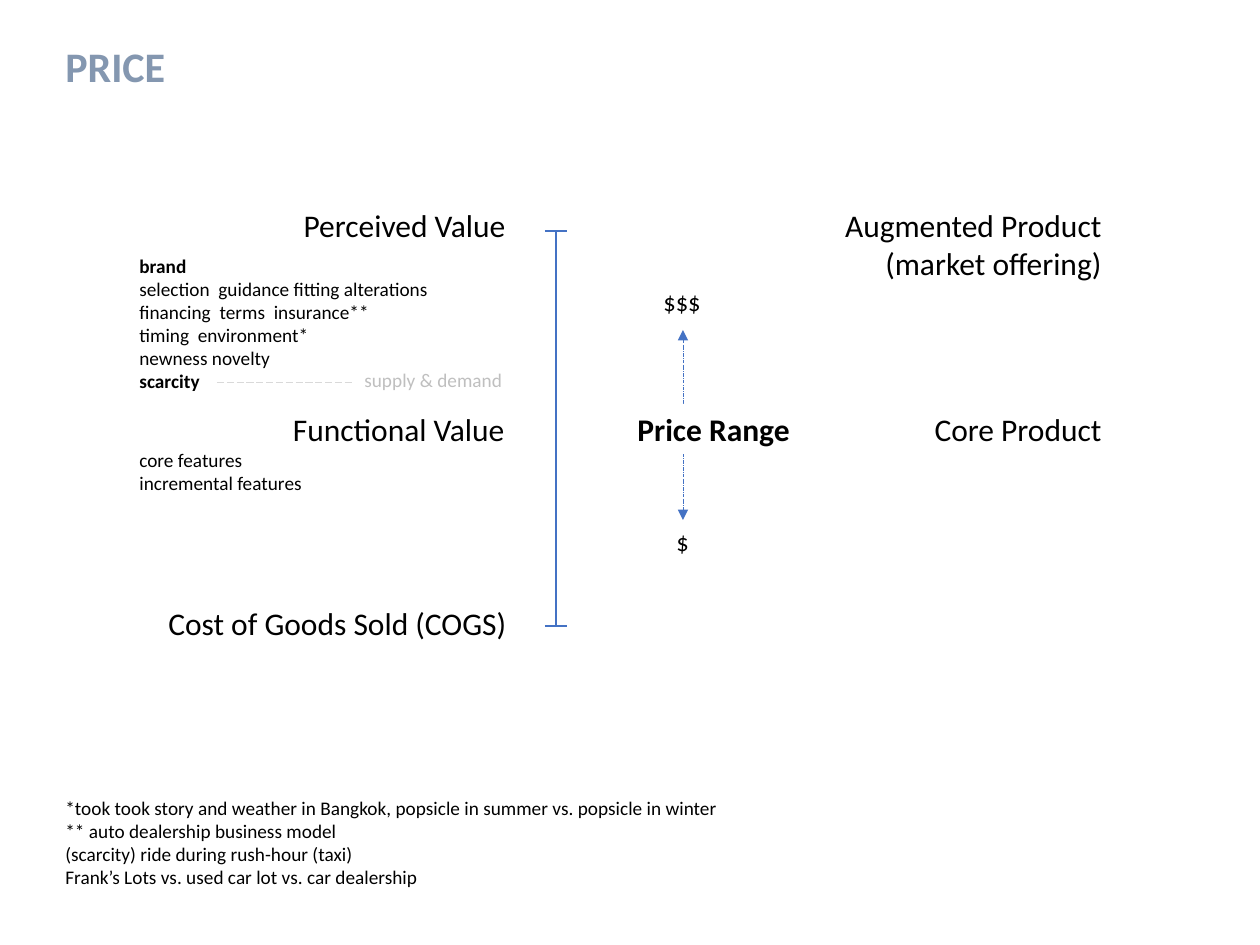
"""Builds the PRICE slide: value levels, price range and footnotes."""
from dataclasses import dataclass

from lxml import etree
from pptx import Presentation
from pptx import util as u
from pptx.dml import color
from pptx.enum import dml, shapes, text
from pptx.oxml import ns


@dataclass(frozen=True)
class Theme:
    font: str = "Calibri"
    ink: str = "000000"
    head: str = "8497B0"
    blue: str = "4472C4"
    mute: str = "BFBFBF"
    pale: str = "D9D9D9"
    back: str = "FFFFFF"
    title: int = 24
    label: int = 18
    price: int = 14
    note: int = 11


T = Theme()
PX = 914400 / 126
SIZE = (1260, 945)

TITLE = ("PRICE", (53, 34, 532, 63))
LABELS = [
    (["Cost of Goods Sold (COGS)"], (151, 598, 368, 50)),
    (["Perceived Value"], (289, 200, 229, 50)),
    (["Functional Value"], (278, 404, 239, 50)),
    (["Core Product"], (920, 404, 194, 50)),
    (["Augmented Product", "(market offering)"], (829, 200, 285, 89)),
]
NOTES = [
    (["brand", "selection  guidance fitting alterations",
      "financing  terms  insurance**", "timing  environment*",
      "newness novelty", "scarcity"], (127, 248, 368, 152)),
    (["*took took story and weather in Bangkok, popsicle in summer vs. popsicle in winter",
      "** auto dealership business model",
      "(scarcity) ride during rush-hour (taxi)",
      "Frank’s Lots vs. used car lot vs. car dealership"], (53, 790, 1116, 106)),
    (["core features", "incremental features"], (127, 442, 368, 59)),
]
STRONG = {"brand", "scarcity"}
SUPPLY = ("supply & demand", (352, 362, 175, 36))
RANGE = [
    ("Price Range", (625, 404, 179, 50), T.label, True),
    ("$$$", (651, 280, 63, 43), T.price, False),
    ("$", (664, 520, 38, 43), T.price, False),
]
SCALE = dict(x=556, top=231, low=626, half=11)
ARROW = (683, 330, 683, 520)
DASH = (217, 382, 353, 382)


def emu(nums):
    return [u.Emu(round(n * PX)) for n in nums]


def rgb(code):
    return color.RGBColor.from_string(code)


def write(shape, rows, size, ink=T.ink, bold=False, wrap=True, side=text.PP_ALIGN.LEFT):
    frame = shape.text_frame
    frame.text = "\n".join(rows)
    frame.word_wrap = wrap
    frame.auto_size = text.MSO_AUTO_SIZE.SHAPE_TO_FIT_TEXT
    for para in frame.paragraphs:
        para.alignment = side
        for run in para.runs:
            font = run.font
            font.name, font.size = T.font, u.Pt(size)
            font.bold = bold or run.text in STRONG
            font.color.rgb = rgb(ink)


def add_text(slide, rows, box, size, **style):
    write(slide.shapes.add_textbox(*emu(box)), rows, size, **style)


def add_line(slide, ends, ink, width, dash=None):
    line = slide.shapes.add_connector(shapes.MSO_CONNECTOR.STRAIGHT, *emu(ends))
    line.line.color.rgb = rgb(ink)
    line.line.width = u.Pt(width)
    if dash:
        line.line.dash_style = dash
    etree.SubElement(line.element.spPr, ns.qn("a:effectLst"))
    return line


def add_heads(line):
    for end in ("a:headEnd", "a:tailEnd"):
        etree.SubElement(line.line._get_or_add_ln(), ns.qn(end), type="triangle")


def add_scale(slide, x, top, low, half):
    add_line(slide, (x, top, x, low), T.blue, 1.5)
    for y in (low, top):
        add_line(slide, (x - half, y, x + half, y), T.blue, 1.5)


def add_range(slide):
    arrow = add_line(slide, ARROW, T.blue, 0.25, dml.MSO_LINE.LONG_DASH_DOT)
    add_heads(arrow)
    for word, box, size, bold in RANGE:
        rect = slide.shapes.add_shape(shapes.MSO_SHAPE.RECTANGLE, *emu(box))
        rect.shadow.inherit = False
        rect.fill.solid()
        rect.fill.fore_color.rgb = rgb(T.back)
        rect.line.fill.background()
        write(rect, [word], size, bold=bold, wrap=False)
    arrow.end_connect(rect, 0)


def main():
    deck = Presentation()
    deck.slide_width, deck.slide_height = emu(SIZE)
    slide = deck.slides.add_slide(deck.slide_layouts[6])
    word, box = TITLE
    add_text(slide, [word], box, T.title, ink=T.head, bold=True)
    add_scale(slide, **SCALE)
    add_range(slide)
    for rows, box in LABELS:
        add_text(slide, rows, box, T.label, wrap=False, side=text.PP_ALIGN.RIGHT)
    for rows, box in NOTES:
        add_text(slide, rows, box, T.note)
    word, box = SUPPLY
    add_text(slide, [word], box, T.note, ink=T.mute)
    add_line(slide, DASH, T.pale, 0.5, dml.MSO_LINE.LONG_DASH)
    deck.save("out.pptx")


if __name__ == "__main__":
    main()
